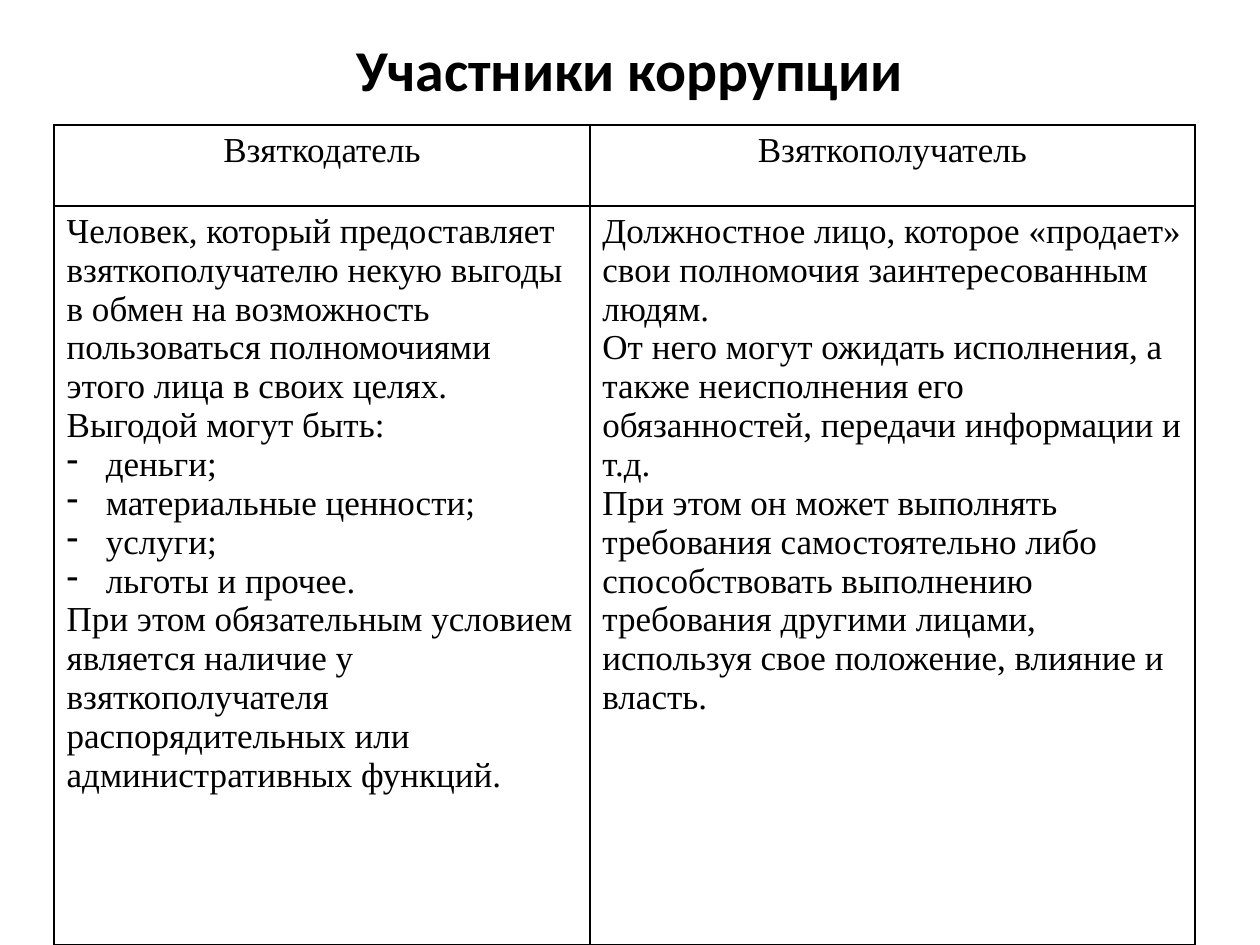
from lxml.etree import SubElement
from pptx import Presentation
from pptx.dml.color import RGBColor
from pptx.enum.text import MSO_ANCHOR as Anchor, MSO_AUTO_SIZE as AutoSize, PP_ALIGN as Align
from pptx.oxml.ns import qn
from pptx.util import Cm, Pt

BLACK = "000000"
COLUMN_WIDTHS = [Cm(10.8), Cm(12.2)]
ROW_HEIGHTS = [Cm(1.63), Cm(14.9)]
BULLET = "- "  # marks a list item in the texts below

HEADINGS = ["Взяткодатель", "Взяткополучатель"]
DESCRIPTIONS = [
    [
        "Человек, который предоставляет взяткополучателю некую выгоды в обмен на "
        "возможность пользоваться полномочиями этого лица в своих целях.",
        "Выгодой могут быть:",
        "- деньги;",
        "- материальные ценности;",
        "- услуги;",
        "- льготы и прочее.",
        "При этом обязательным условием является наличие у взяткополучателя "
        "распорядительных или административных функций.",
    ],
    [
        "Должностное лицо, которое «продает» свои полномочия заинтересованным людям.",
        "От него могут ожидать исполнения, а также неисполнения его обязанностей, "
        "передачи информации и т.д.",
        "При этом он может выполнять требования самостоятельно либо способствовать "
        "выполнению требования другими лицами, используя свое положение, влияние и власть.",
    ],
]


def color(value):
    return RGBColor.from_string(value)


def format_runs(paragraph, font_name, size, bold=False):
    for run in paragraph.runs:
        run.font.name = font_name
        run.font.size = Pt(size)
        run.font.bold = bold
        run.font.color.rgb = color(BLACK)


def add_title(slide, text):
    title = slide.shapes.title
    title.left, title.top, title.width, title.height = Cm(1.75), Cm(1.02), Cm(21.9), Cm(0.91)
    frame = title.text_frame
    frame.text = text
    frame.word_wrap = True
    frame.auto_size = AutoSize.NONE
    frame.vertical_anchor = Anchor.MIDDLE
    paragraph = frame.paragraphs[0]
    paragraph.alignment = Align.CENTER
    paragraph.line_spacing = 0.9
    format_runs(paragraph, "Calibri", 33, bold=True)


def set_bullet(paragraph):
    properties = paragraph._p.get_or_add_pPr()
    properties.set("marL", str(Cm(0.79)))
    properties.set("indent", str(-Cm(0.79)))
    SubElement(properties, qn("a:buFontTx"))
    SubElement(properties, qn("a:buChar"), char="-")


def set_borders(cell):
    properties = cell._tc.get_or_add_tcPr()
    for position, side in enumerate(("a:lnL", "a:lnR", "a:lnT", "a:lnB")):
        line = SubElement(properties, qn(side), w=str(Pt(1)))
        fill = SubElement(line, qn("a:solidFill"))
        SubElement(fill, qn("a:srgbClr"), val=BLACK)
        properties.insert(position, line)  # borders come before the fill


def fill_cell(cell, texts, alignment):
    cell.fill.background()
    set_borders(cell)
    frame = cell.text_frame
    frame.text = "\n".join(text.removeprefix(BULLET) for text in texts)
    for paragraph, text in zip(frame.paragraphs, texts):
        paragraph.alignment = alignment
        format_runs(paragraph, "Times New Roman", 20)
        if text.startswith(BULLET):
            set_bullet(paragraph)


def add_participants_table(slide):
    table = slide.shapes.add_table(
        2, 2, Cm(1.09), Cm(2.52), sum(COLUMN_WIDTHS), sum(ROW_HEIGHTS)
    ).table
    table.first_row = table.horz_banding = False
    for row, height in zip(table.rows, ROW_HEIGHTS):
        row.height = height
    for index, width in enumerate(COLUMN_WIDTHS):
        table.columns[index].width = width
        fill_cell(table.cell(0, index), [HEADINGS[index]], Align.CENTER)
        fill_cell(table.cell(1, index), DESCRIPTIONS[index], Align.LEFT)


def main():
    presentation = Presentation()
    presentation.slide_width, presentation.slide_height = Cm(25.4), Cm(19.05)
    # Layout with a title only
    slide = presentation.slides.add_slide(presentation.slide_layouts[5])
    add_title(slide, "Участники коррупции")
    add_participants_table(slide)
    presentation.save("out.pptx")


if __name__ == "__main__":
    main()
